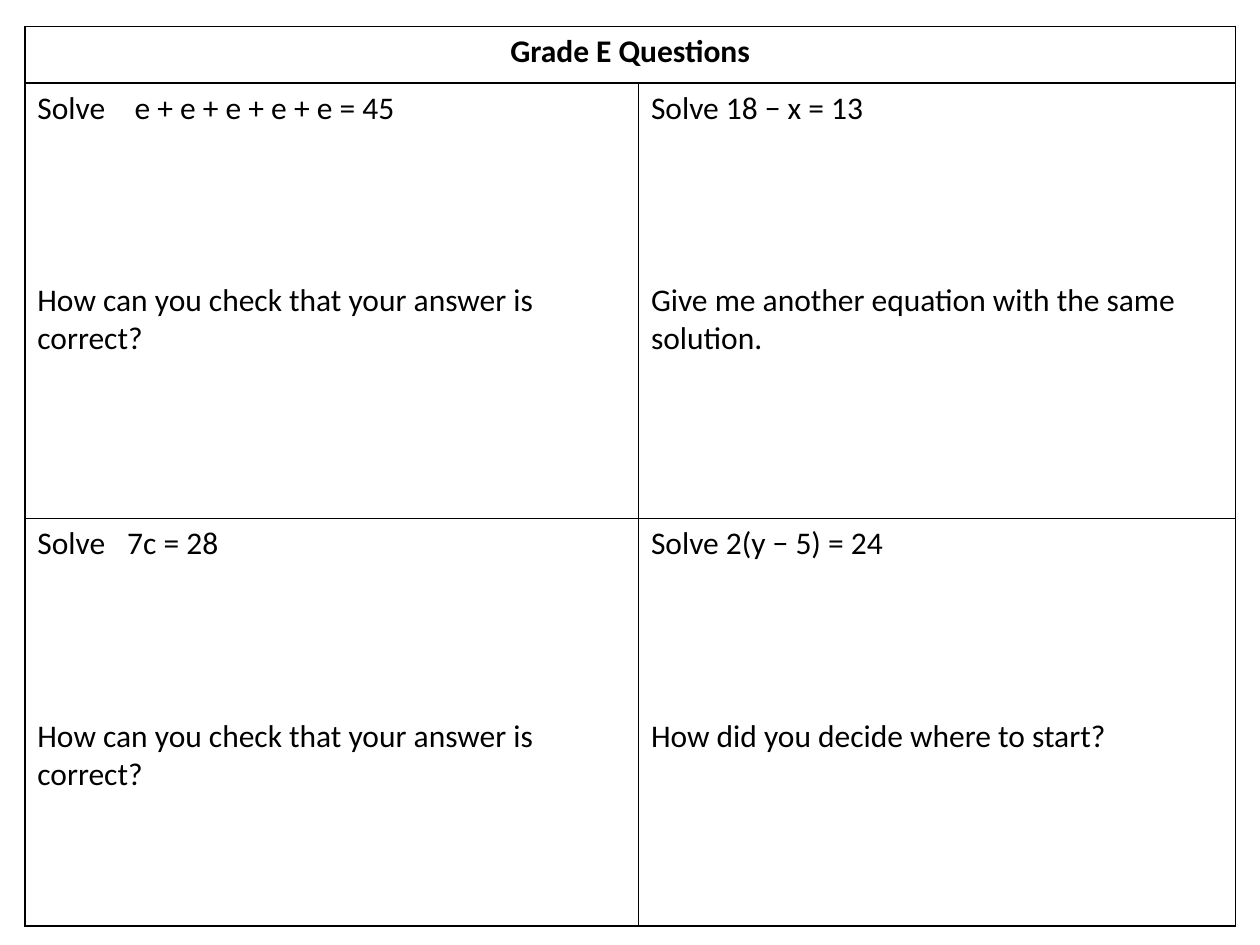
import pptx
import pptx.dml.color
import pptx.enum.text
import pptx.oxml.ns
import pptx.util
from lxml import etree

Cm = pptx.util.Cm
Pt = pptx.util.Pt


def colour(hex_string):
    return pptx.dml.color.RGBColor.from_string(hex_string)


def add_element(parent, tag, **attributes):
    return etree.SubElement(parent, pptx.oxml.ns.qn(tag), attributes)


class Worksheet:
    font_name = "Calibri"
    font_size = Pt(18)
    ink = "000000"
    border_width = Pt(1)
    working_space = Pt(88)

    def __init__(self, slide):
        self.slide = slide

    def grid(self, left, top, column_widths, row_heights):
        frame = self.slide.shapes.add_table(
            len(row_heights), len(column_widths), Cm(left), Cm(top),
            Cm(sum(column_widths)), Cm(sum(row_heights)))
        questions = frame.table
        questions.first_row = False
        questions.horz_banding = False
        for column, width in zip(questions.columns, column_widths):
            column.width = Cm(width)
        for row, height in zip(questions.rows, row_heights):
            row.height = Cm(height)
        for cell in questions.iter_cells():
            self.border(cell)
            cell.fill.background()
        return questions

    def border(self, cell):
        properties = cell._tc.get_or_add_tcPr()
        for side in ("a:lnL", "a:lnR", "a:lnT", "a:lnB"):
            line = add_element(properties, side, w=str(int(self.border_width)))
            add_element(add_element(line, "a:solidFill"), "a:srgbClr", val=self.ink)

    def text(self, paragraph, wording, bold=False):
        paragraph.text = wording
        paragraph.font.name = self.font_name
        paragraph.font.size = self.font_size
        paragraph.font.bold = bold
        paragraph.font.color.rgb = colour(self.ink)

    def heading(self, cell, wording):
        paragraph = cell.text_frame.paragraphs[0]
        self.text(paragraph, wording, bold=True)
        paragraph.alignment = pptx.enum.text.PP_ALIGN.CENTER

    def question(self, cell, equation, prompt, equation_tab=None):
        task = cell.text_frame.paragraphs[0]
        if equation_tab:
            tabs = add_element(task._p.get_or_add_pPr(), "a:tabLst")
            add_element(tabs, "a:tab", pos=str(int(Cm(equation_tab))), algn="l")
        self.text(task, equation)
        follow_up = cell.text_frame.add_paragraph()
        follow_up.space_before = self.working_space
        self.text(follow_up, prompt)


def main():
    presentation = pptx.Presentation()
    presentation.slide_width = Cm(25.4)
    presentation.slide_height = Cm(19.05)
    blank_layout = presentation.slide_layouts[6]
    worksheet = Worksheet(presentation.slides.add_slide(blank_layout))

    questions = worksheet.grid(0.5, 0.53, [12.37, 12.04], [1.14, 8.78, 8.22])
    questions.cell(0, 0).merge(questions.cell(0, 1))
    worksheet.heading(questions.cell(0, 0), "Grade E Questions")

    check = "How can you check that your answer is correct?"
    worksheet.question(questions.cell(1, 0), "Solve\te + e + e + e + e = 45", check, 1.96)
    worksheet.question(questions.cell(1, 1), "Solve 18 − x = 13",
                       "Give me another equation with the same solution.")
    worksheet.question(questions.cell(2, 0), "Solve\t7c = 28", check, 1.81)
    worksheet.question(questions.cell(2, 1), "Solve 2(y − 5) = 24",
                       "How did you decide where to start?")

    presentation.save("out.pptx")


if __name__ == "__main__":
    main()
